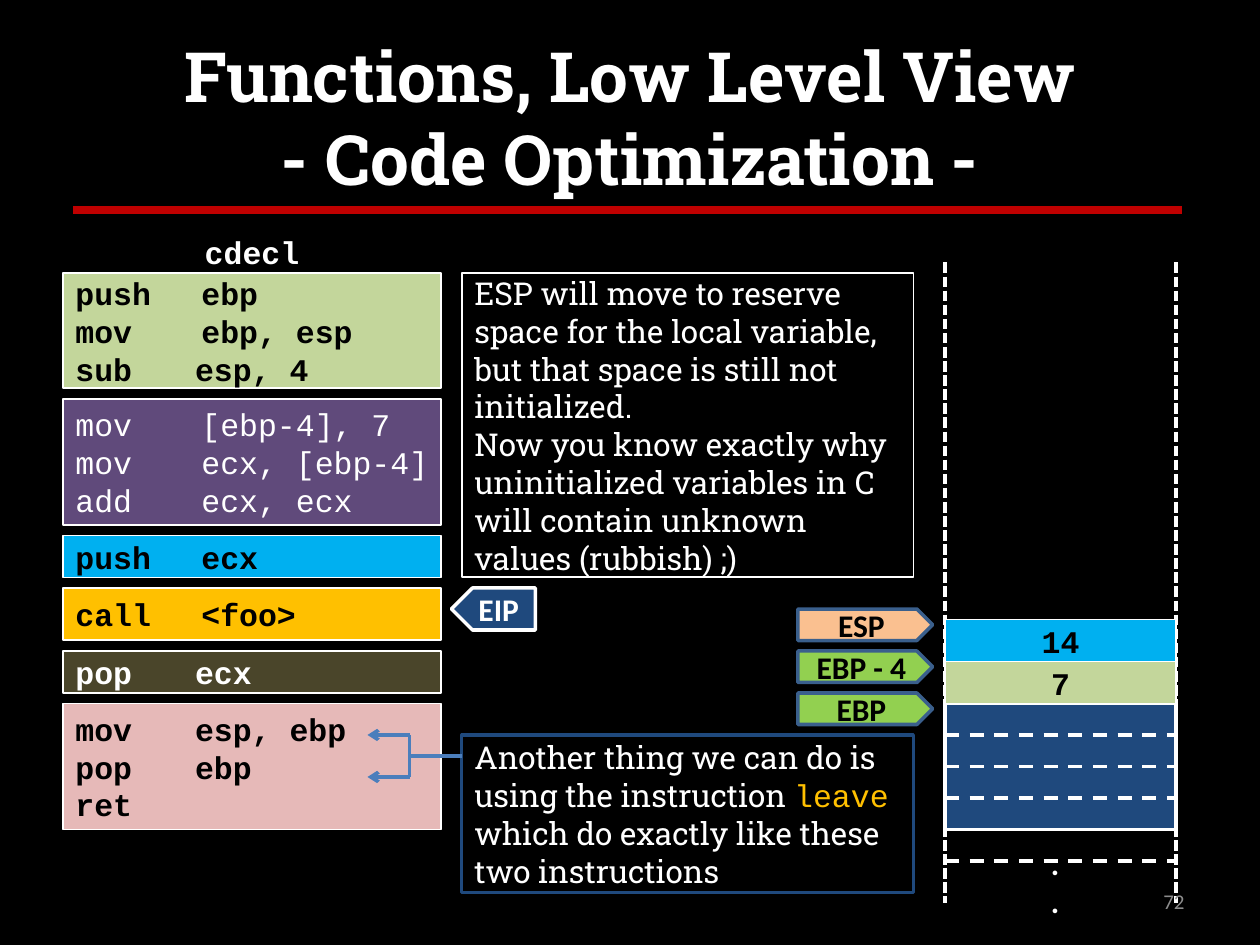
from lxml import etree
from pptx import Presentation
from pptx.dml.color import RGBColor
from pptx.enum import dml, shapes, text
from pptx.oxml import ns
from pptx.util import Pt

BLACK = RGBColor(0, 0, 0)
WHITE = RGBColor(255, 255, 255)
RED = RGBColor(0xC0, 0, 0)
GREEN = RGBColor(0xC3, 0xD6, 0x9B)
LIME = RGBColor(0x92, 0xD0, 0x50)
PURPLE = RGBColor(0x60, 0x4A, 0x7B)
SKY = RGBColor(0, 0xB0, 0xF0)
AMBER = RGBColor(0xFF, 0xC0, 0)
OLIVE = RGBColor(0x4A, 0x45, 0x2A)
PINK = RGBColor(0xE6, 0xB9, 0xB8)
PEACH = RGBColor(0xFA, 0xC0, 0x90)
NAVY = RGBColor(0x1F, 0x49, 0x7D)
STEEL = RGBColor(0x3A, 0x5F, 0x8C)
BLUE = RGBColor(0x4B, 0x7E, 0xBC)
GRAY = RGBColor(0x8C, 0x8C, 0x8C)

CODE, LABEL, PROSE = "Courier New", "Calibri", "Roboto Slab"
LEFT, CENTER, RIGHT = text.PP_ALIGN.LEFT, text.PP_ALIGN.CENTER, text.PP_ALIGN.RIGHT
RECT, PLATE = shapes.MSO_SHAPE.RECTANGLE, shapes.MSO_SHAPE.PENTAGON
DASH, SHORT_DASH = dml.MSO_LINE.DASH, dml.MSO_LINE.SQUARE_DOT
WIDE, NARROW = 72, 68.4  # hanging indents of the operands


def add_run(paragraph, words, font, color, bold=False, size=18):
    run = paragraph.add_run()
    run.text = words
    run.font.name, run.font.size, run.font.bold = font, Pt(size), bold
    run.font.color.rgb = color


def write(shape, paragraphs, align=LEFT, hangs=()):
    """Fill a shape with paragraphs, each a list of add_run argument tuples."""
    frame = shape.text_frame
    frame.word_wrap = True
    frame.vertical_anchor = text.MSO_ANCHOR.MIDDLE
    for i, runs in enumerate(paragraphs):
        paragraph = frame.add_paragraph() if i else frame.paragraphs[0]
        paragraph.alignment = align
        for run in runs:
            add_run(paragraph, *run)
    for paragraph, hang in zip(frame.paragraphs, hangs):
        props = paragraph._p.get_or_add_pPr()
        props.set("marL", str(Pt(hang)))
        props.set("indent", str(-Pt(hang)))


def add_box(slide, box, fill, outline, width=1, kind=RECT):
    shape = slide.shapes.add_shape(kind, *map(Pt, box))
    shape.shadow.inherit = False
    if fill is None:
        shape.fill.background()
    else:
        shape.fill.solid()
        shape.fill.fore_color.rgb = fill
    shape.line.color.rgb, shape.line.width = outline, Pt(width)
    return shape


def add_line(parent, start, end, color=WHITE, width=2, dash=None, arrow=False):
    line = parent.shapes.add_connector(
        shapes.MSO_CONNECTOR.STRAIGHT, *map(Pt, (*start, *end)))
    line.line.color.rgb, line.line.width = color, Pt(width)
    if dash is not None:
        line.line.dash_style = dash
    if arrow:
        etree.SubElement(line.line._get_or_add_ln(), ns.qn("a:tailEnd"), type="arrow")
    etree.SubElement(line._element.spPr, ns.qn("a:effectLst"))


def add_label(slide, box, paragraphs, align):
    write(slide.shapes.add_textbox(*map(Pt, box)), paragraphs, align)


def add_title(slide, box):
    title = slide.shapes.title
    title.left, title.top, title.width, title.height = map(Pt, box)
    style = (PROSE, WHITE, True, 39.6)
    write(title, [[("Functions, Low Level View", *style)]], CENTER)
    heading = title.text_frame.paragraphs[0]
    heading.add_line_break()
    add_run(heading, "- Code Optimization -", *style)
    left, top, width, height = box
    rule = top + height + 8.5
    add_line(slide, (left + 6, rule), (left + width - 8.5, rule), RED, 5)


def add_code(slide, left, top, width):
    """Stack the code blocks downwards, 6 pt apart, under their heading."""
    blocks = [
        (66, GREEN, BLACK, True, (WIDE, WIDE, NARROW),
         ["push\tebp", "mov\tebp, esp", "sub\tesp, 4"]),
        (72, PURPLE, WHITE, False, (WIDE,) * 3,
         ["mov\t[ebp-4], 7", "mov\tecx, [ebp-4]", "add\tecx, ecx"]),
        (24, SKY, BLACK, True, (WIDE,), ["push\tecx"]),
        (30, AMBER, BLACK, True, (WIDE,), ["call\t<foo>"]),
        (24, OLIVE, WHITE, True, (NARROW,), ["pop\tecx"]),
        (72, PINK, BLACK, True, (NARROW,) * 3, ["mov\tesp, ebp", "pop\tebp", "ret"]),
    ]
    add_label(slide, (left, top, width, 24), [[("cdecl", CODE, WHITE, True)]], CENTER)
    top += 24
    for height, fill, color, bold, hangs, lines in blocks:
        block = add_box(slide, (left, top, width, height), fill, WHITE)
        write(block, [[(line, CODE, color, bold)] for line in lines], hangs=hangs)
        top += height + 6


def add_stack(slide, left, top, width, height):
    """Draw the memory column: open sides, frame, values and slot lines."""
    right, slot = left + width, 24
    for x in (left, right):
        add_line(slide, (x, top), (x, top + height), dash=SHORT_DASH)
    frame = top + 252
    add_box(slide, (left, frame, width, 72), NAVY, WHITE, 2)
    add_label(slide, (left - 6, frame + 84, width + 6, 36),
              [[(".", LABEL, WHITE, True)]] * 2, CENTER)
    for step in (1, 2, 3, 5):
        y = frame + 18 * step
        add_line(slide, (left, y), (right, y), dash=DASH)
    for i, (value, fill) in enumerate([("7", GREEN), ("14", SKY)], 1):
        cell = add_box(slide, (left, frame - slot * i, width, slot), fill, WHITE)
        write(cell, [[(value, CODE, BLACK, True)]], CENTER)


def add_pointers(slide, left, top):
    for i, (name, fill) in enumerate([("ESP", PEACH), ("EBP - 4", LIME), ("EBP", LIME)]):
        tag = add_box(slide, (left, top + 24 * i, 77, 18), fill, STEEL, 2, PLATE)
        write(tag, [[(name, LABEL, BLACK, True)]], CENTER)


def add_instruction_pointer(slide, box):
    tag = add_box(slide, box, NAVY, WHITE, 2, PLATE)
    tag._element.spPr.xfrm.set("flipH", "1")
    write(tag, [[("EIP", LABEL, WHITE, True)]], CENTER)


def add_notes(slide, left, top, width):
    reserve = add_box(slide, (left, top, width, 174), None, WHITE)
    write(reserve, [[(words, PROSE, WHITE)] for words in (
        "ESP will move to reserve space for the local variable, "
        "but that space is still not initialized.",
        "Now you know exactly why uninitialized variables in C "
        "will contain unknown values (rubbish) ;)")])
    leave = add_box(slide, (left, top + 264, width, 90), None, NAVY, 1.75)
    write(leave, [[
        ("Another thing we can do is using the instruction ", PROSE, WHITE),
        ("leave", CODE, AMBER),
        (" which do exactly like these two instructions", PROSE, WHITE)]])


def add_bracket(slide, left, top, width, height):
    """Join the note on the right to the two instructions on the left."""
    bracket = slide.shapes.add_group_shape()
    spine, bottom, middle = left + 24, top + height, top + height / 2
    for y in (top, bottom):
        add_line(bracket, (spine, y), (left, y), BLUE, arrow=True)
    add_line(bracket, (spine, top), (spine, bottom), BLUE)
    add_line(bracket, (spine, middle), (left + width, middle), BLUE)


def main():
    deck = Presentation()
    deck.slide_width, deck.slide_height = Pt(720), Pt(540)
    slide = deck.slides.add_slide(deck.slide_layouts[5])
    slide.background.fill.solid()
    slide.background.fill.fore_color.rgb = BLACK
    add_title(slide, (36, 21.6, 648, 90))
    add_code(slide, 36, 132, 216)
    add_stack(slide, 540, 150, 132, 366)
    add_instruction_pointer(slide, (258, 336, 48, 24))
    add_pointers(slide, 456, 348)
    add_notes(slide, 264, 156, 258)
    add_bracket(slide, 210, 420, 54, 24)
    add_label(slide, (516, 500.4, 168, 28.8), [[("72", LABEL, GRAY, False, 12)]], RIGHT)
    deck.save("out.pptx")


if __name__ == "__main__":
    main()
